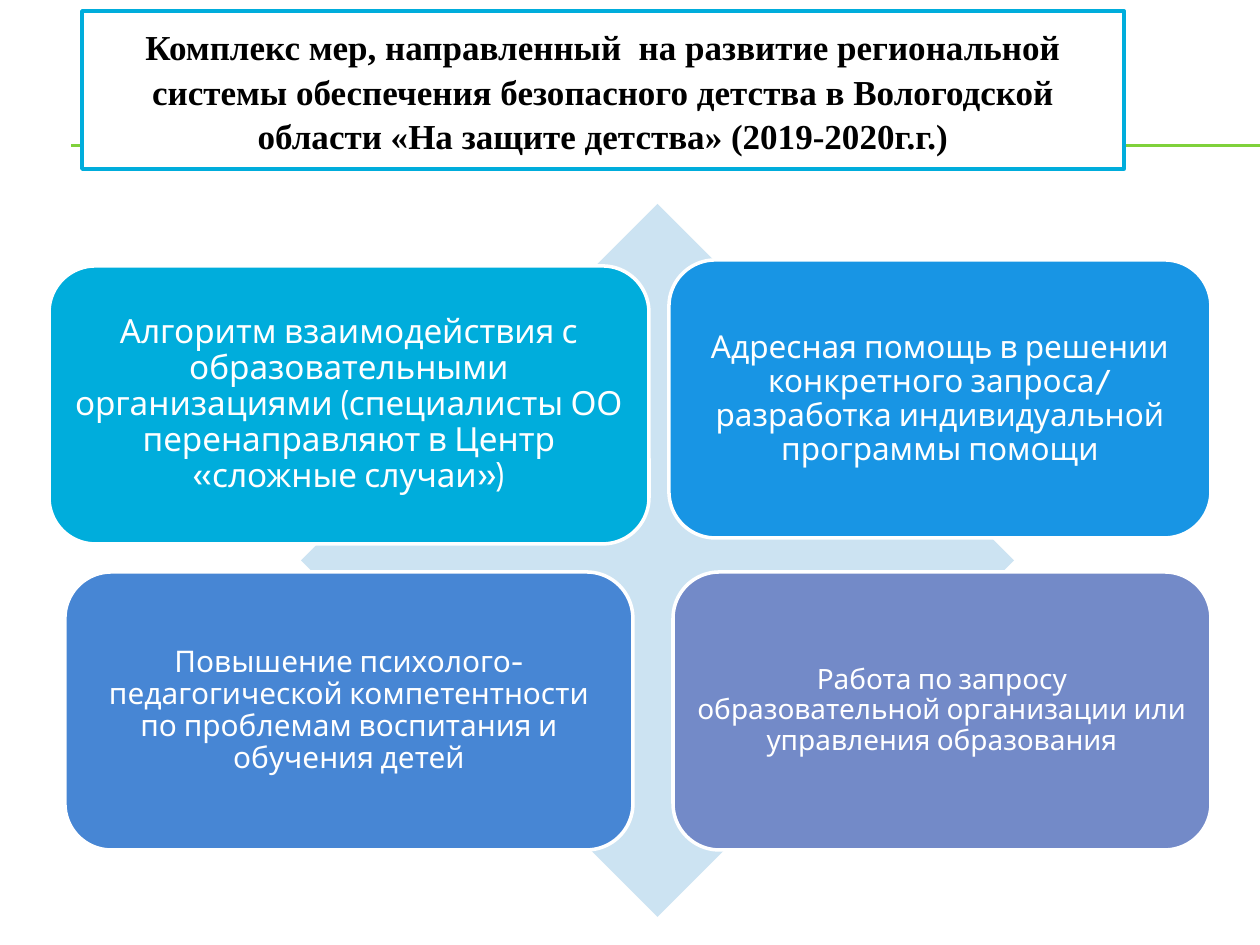
from dataclasses import dataclass

from lxml.etree import SubElement
from pptx import Presentation
from pptx.dml.color import RGBColor
from pptx.enum.shapes import MSO_CONNECTOR, MSO_SHAPE
from pptx.enum.text import MSO_ANCHOR, MSO_AUTO_SIZE, PP_ALIGN
from pptx.oxml.ns import qn
from pptx.util import Pt

PX = 914400 / 126


@dataclass(frozen=True)
class Theme:
    """Colours, fonts and type sizes of the slide."""
    white: str = "FFFFFF"
    black: str = "000000"
    accent: str = "00ADDC"
    rule: str = "7FD13B"
    diamond: str = "CCE3F2"
    cards: tuple = ("00ADDC", "1895E4", "4786D4", "738AC8")
    card_sizes: tuple = (19, 18, 17, 16)
    title_size: int = 20
    title_font: str = "Times New Roman"
    body_font: str = "Cabin"
    border: float = 2
    hairline: float = 0.75


def emu(*lengths):
    return [round(n * PX) for n in lengths]


class SlideBuilder:
    """Draws styled elements on one slide."""

    def __init__(self, slide, theme):
        self.slide, self.theme = slide, theme

    def paint(self, sp, fill, line=None):
        sp.fill.solid()
        sp.fill.fore_color.rgb = RGBColor.from_string(fill)
        if line:
            sp.line.color.rgb = RGBColor.from_string(line)
            sp.line.width = Pt(self.theme.border)
        else:
            sp.line.fill.background()

    def set_text(self, sp, text, color, inset, font, paragraph):
        tf = sp.text_frame
        margins = dict.fromkeys(
            ("margin_left", "margin_top", "margin_right", "margin_bottom"), emu(inset)[0])
        p = tf.paragraphs[0]
        r = p.add_run()
        r.text = text
        r.font.color.rgb = RGBColor.from_string(color)
        frame = dict(word_wrap=True, auto_size=MSO_AUTO_SIZE.NONE,
                     vertical_anchor=MSO_ANCHOR.MIDDLE, **margins)
        paragraph = dict(alignment=PP_ALIGN.CENTER, **paragraph)
        for target, values in ((tf, frame), (p, paragraph), (r.font, font)):
            for name, value in values.items():
                setattr(target, name, value)

    def title(self, box, text):
        t, sp = self.theme, self.slide.shapes.title
        sp.left, sp.top, sp.width, sp.height = emu(*box)
        self.paint(sp, t.white, t.accent)
        self.set_text(sp, text, t.black, 12,
                      dict(name=t.title_font, size=Pt(t.title_size), bold=True),
                      dict(line_spacing=1.05))

    def rule(self, x1, x2, y):
        cxn = self.slide.shapes.add_connector(MSO_CONNECTOR.STRAIGHT, *emu(x1, y, x2, y))
        cxn.line.color.rgb = RGBColor.from_string(self.theme.rule)
        cxn.line.width = Pt(self.theme.hairline)
        SubElement(cxn._element.spPr, qn("a:effectLst"))
        self.slide.shapes.title._element.addprevious(cxn._element)

    def shape(self, kind, box, fill, line=None):
        sp = self.slide.shapes.add_shape(kind, *emu(*box))
        sp.shadow.inherit = False
        self.paint(sp, fill, line)
        return sp

    def card(self, box, text, fill, size):
        t = self.theme
        sp = self.shape(MSO_SHAPE.ROUNDED_RECTANGLE, box, fill, t.white)
        self.set_text(sp, text, t.white, 9,
                      dict(name=t.body_font, size=Pt(size)), dict(line_spacing=0.9))


def main():
    prs = Presentation()
    prs.slide_width, prs.slide_height = emu(1260, 945)
    theme = Theme()
    s = SlideBuilder(prs.slides.add_slide(prs.slide_layouts[5]), theme)

    for y in (145, 146):
        s.rule(71, 1260, y)
    s.title((82, 11, 1042, 158),
            "Комплекс мер, направленный  на развитие региональной системы обеспечения "
            "безопасного детства в Вологодской области «На защите детства» (2019-2020г.г.)")
    s.shape(MSO_SHAPE.DIAMOND, (301, 204, 713, 713), theme.diamond)

    height = 278
    cards = (
        (49, 266, 600, "Алгоритм взаимодействия с образовательными организациями "
                       "(специалисты ОО перенаправляют в Центр «сложные случаи»)"),
        (669, 260, 542, "Адресная помощь в решении конкретного запроса/ "
                        "разработка индивидуальной программы помощи"),
        (65, 572, 568, "Повышение психолого-педагогической компетентности "
                       "по проблемам воспитания и обучения детей"),
        (673, 572, 538, "Работа по запросу образовательной организации "
                        "или управления образования"),
    )
    for (x, y, width, text), fill, size in zip(cards, theme.cards, theme.card_sizes):
        s.card((x, y, width, height), text, fill, size)

    prs.save("out.pptx")


if __name__ == "__main__":
    main()
